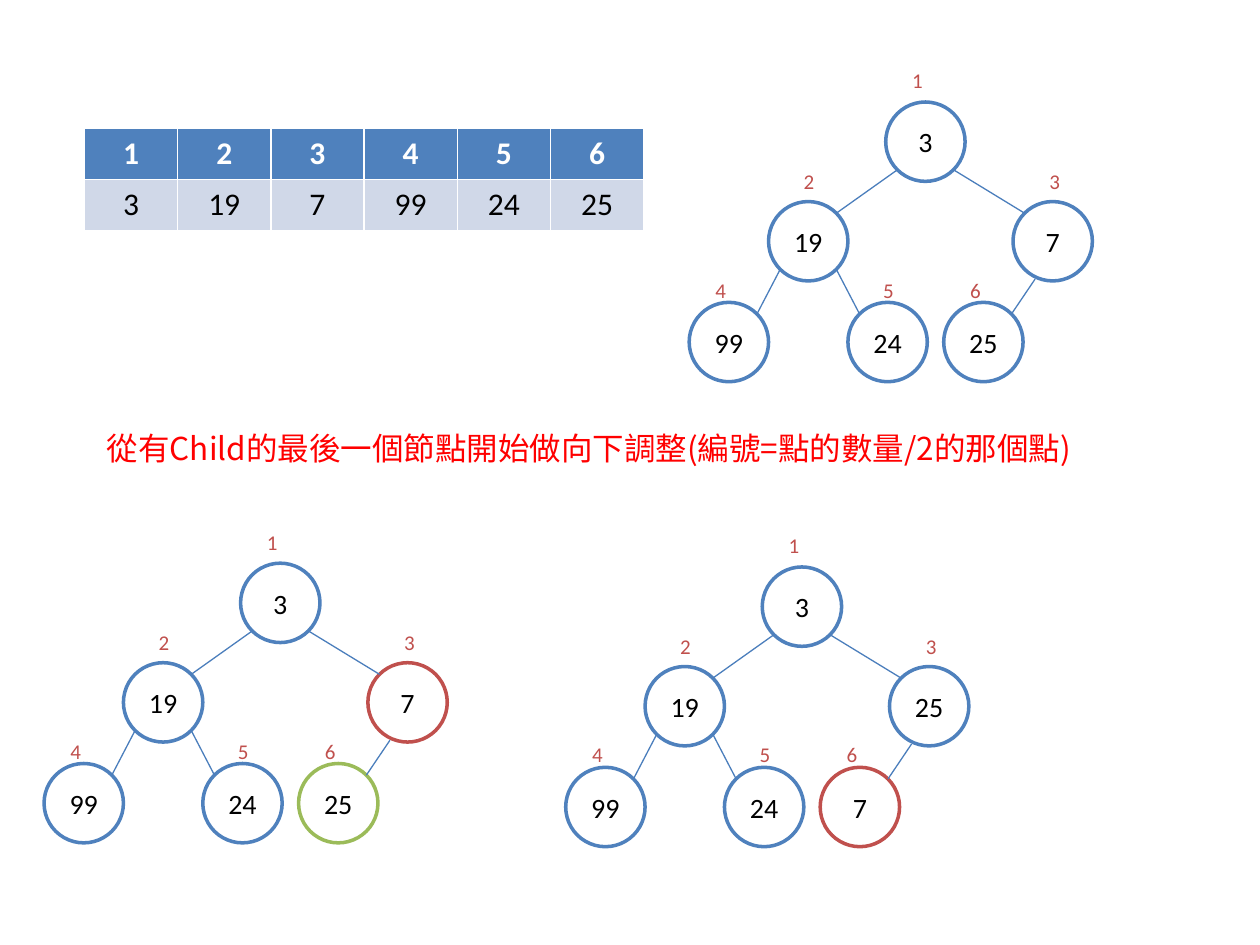
"""Build a slide showing an array, its heap tree and one sift-down step."""
from math import sqrt

from lxml.etree import SubElement
from pptx import Presentation
from pptx.dml.color import RGBColor
from pptx.enum.shapes import MSO_CONNECTOR as Connector, MSO_SHAPE as Shape
from pptx.enum.text import MSO_ANCHOR as Anchor, MSO_AUTO_SIZE as AutoSize, PP_ALIGN as Align
from pptx.oxml.ns import qn
from pptx.util import Inches, Pt

BLUE, EDGE_BLUE, PALE = "4F81BD", "4B7EBC", "D0D8E8"
RED, GREEN, BRIGHT_RED = "C0504D", "9BBB59", "FF0000"
WHITE, BLACK = "FFFFFF", "000000"
LATIN, CJK = "Calibri", "Noto Sans CJK SC"

VALUES = ["3", "19", "7", "99", "24", "25"]
RULE = "從有Child的最後一個節點開始做向下調整(編號=點的數量/2的那個點)"

# (root left, root top), node values, outline colours by node number
TREES = [
    ((7.03, 0.81), VALUES, {}),
    ((1.91, 4.47), VALUES, {3: RED, 6: GREEN}),
    ((6.05, 4.5), ["3", "19", "25", "99", "24", "7"], {6: RED}),
]
NODE_OFFSETS = [(0, 0), (-0.93, 0.79), (1.01, 0.79), (-1.56, 1.59), (-0.3, 1.59), (0.46, 1.59)]
LABEL_OFFSETS = [(0.11, -0.32), (0.18, -0.31), (0.19, -0.31), (0.11, -0.25), (0.18, -0.25), (0.11, -0.25)]
DIAMETER = 0.63
DIAGONAL = DIAMETER / 2 / sqrt(2)
EDGE_STARTS = {6: (-0.14, 0.3)}


def color(value):
    return RGBColor.from_string(value)


def write(frame, text, size, ink, font=LATIN, align=Align.CENTER, bold=False):
    paragraph = frame.paragraphs[0]
    paragraph.alignment = align
    run = paragraph.add_run()
    run.text = text
    run.font.size, run.font.name, run.font.bold = Pt(size), font, bold
    run.font.color.rgb = color(ink)
    return run


def add_array(shapes):
    columns = len(VALUES)
    table = shapes.add_table(2, columns, Inches(0.67), Inches(1.02),
                             Inches(0.74 * columns), Inches(0.81)).table
    numbers = [str(number) for number in range(1, columns + 1)]
    rows = [(numbers, BLUE, WHITE, True), (VALUES, PALE, BLACK, False)]
    for row, (texts, fill, ink, bold) in enumerate(rows):
        for column, text in enumerate(texts):
            cell = table.cell(row, column)
            cell.fill.solid()
            cell.fill.fore_color.rgb = color(fill)
            write(cell.text_frame, text, 18, ink, bold=bold)


def add_rule(shapes):
    frame = shapes.add_textbox(Inches(0.75), Inches(3.36), Inches(7.98), Inches(0.4)).text_frame
    frame.word_wrap = True
    run = write(frame, RULE, 18, BRIGHT_RED, CJK, Align.LEFT)
    SubElement(run.font._element, qn("a:ea"), typeface=CJK)


def add_edge(shapes, start, end):
    edge = shapes.add_connector(Connector.STRAIGHT, *map(Inches, start + end))
    edge.line.color.rgb = color(EDGE_BLUE)
    edge.line.width = Pt(0.75)
    SubElement(edge._element.spPr, qn("a:effectLst"))


def add_node(shapes, left, top, value, outline):
    node = shapes.add_shape(Shape.OVAL, Inches(left), Inches(top), Inches(DIAMETER), Inches(DIAMETER))
    node.shadow.inherit = False
    node.fill.solid()
    node.fill.fore_color.rgb = color(WHITE)
    node.line.color.rgb = color(outline)
    node.line.width = Pt(2)
    node.text_frame.vertical_anchor = Anchor.MIDDLE
    write(node.text_frame, value, 16, BLACK)


def add_label(shapes, left, top, number):
    frame = shapes.add_textbox(Inches(left), Inches(top), Inches(0.29), Inches(0.3)).text_frame
    frame.word_wrap = False
    frame.auto_size = AutoSize.SHAPE_TO_FIT_TEXT
    write(frame, str(number), 12, RED, align=Align.LEFT)


def add_tree(shapes, root, values, outlines):
    corners = [(root[0] + dx, root[1] + dy) for dx, dy in NODE_OFFSETS]
    centers = [(left + DIAMETER / 2, top + DIAMETER / 2) for left, top in corners]
    for number, ((left, top), value) in enumerate(zip(corners, values), 1):
        add_node(shapes, left, top, value, outlines.get(number, BLUE))
    for child in range(2, len(values) + 1):
        side = -1 if child % 2 == 0 else 1
        start_dx, start_dy = EDGE_STARTS.get(child, (side * DIAGONAL, DIAGONAL))
        parent_x, parent_y = centers[child // 2 - 1]
        child_x, child_y = centers[child - 1]
        add_edge(shapes, (parent_x + start_dx, parent_y + start_dy),
                 (child_x - side * DIAGONAL, child_y - DIAGONAL))
    for number, ((left, top), (dx, dy)) in enumerate(zip(corners, LABEL_OFFSETS), 1):
        add_label(shapes, left + dx, top + dy, number)


def main():
    deck = Presentation()
    deck.slide_width, deck.slide_height = Inches(10), Inches(7.5)
    shapes = deck.slides.add_slide(deck.slide_layouts[6]).shapes
    add_array(shapes)
    add_rule(shapes)
    for root, values, outlines in TREES:
        add_tree(shapes.add_group_shape().shapes, root, values, outlines)
    deck.save("out.pptx")


if __name__ == "__main__":
    main()
